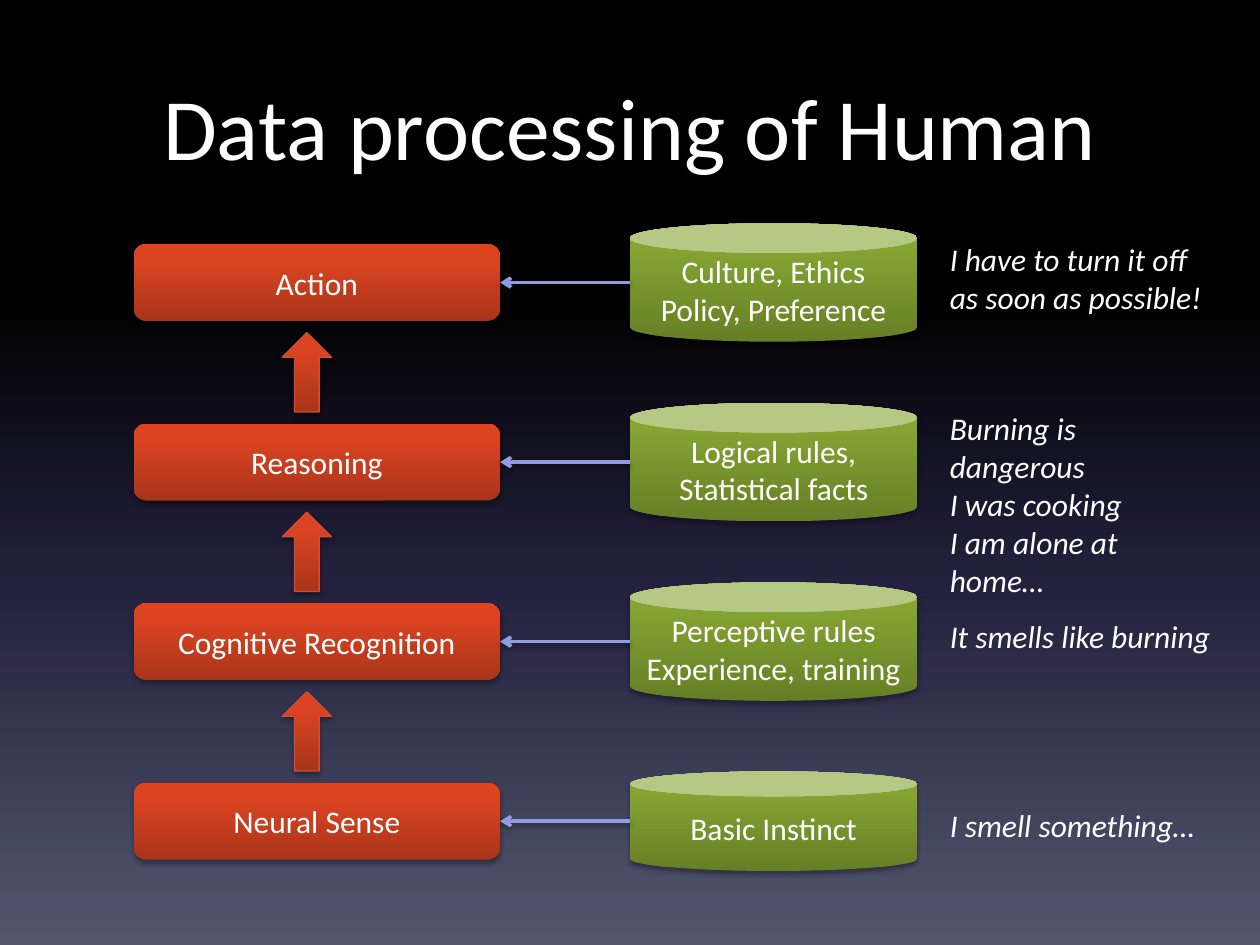
from dataclasses import dataclass

from lxml import etree
from pptx import Presentation
from pptx import util as u
from pptx.dml.color import RGBColor
from pptx.enum import shapes, text
from pptx.oxml.ns import qn

WIDTH, HEIGHT = 10, 7.5
COLORS = {"text": "FFFFFF", "link": "909CE1", "arrow_edge": "CB5034", "shadow": "000000"}
GRADIENTS = {
    "night": [(0, "000000"), (31, "000000"), (62, "24213E"), (100, "51566D")],
    "red": [(0, "A9341A"), (80, "DB4422"), (100, "E0421E")],
    "green": [(0, "667F26"), (80, "85A432"), (100, "87A730")],
}
UP, DOWN = 90, 270

# Stage, knowledge, its height, thought, and the thought's drop below the row's middle
LEVELS = [
    ("Action", ["Culture, Ethics", "Policy, Preference"], 0.94,
     ["I have to turn it off", "as soon as possible!"], -0.03),
    ("Reasoning", ["Logical rules, Statistical facts"], 0.94,
     ["Burning is dangerous", "I was cooking", "I am alone at home…"], 0.04),
    ("Cognitive Recognition", ["Perceptive rules", "Experience, training"], 0.94,
     ["It smells like burning"], -0.04),
    ("Neural Sense", ["Basic Instinct"], 0.79, ["I smell something…"], 0.03),
]


@dataclass
class Box:
    left: float
    top: float
    width: float
    height: float

    def inches(self):
        return [u.Inches(v) for v in (self.left, self.top, self.width, self.height)]

    def centred(self, left, width, height, drop=0):
        """Box at shares of this one's width, centred on its middle plus drop."""
        middle = self.top + self.height / 2 + drop
        return Box(self.left + left * self.width, middle - height / 2,
                   width * self.width, height)


def set_gradient(fill, owner, stops, angle):
    fill.gradient()
    fill.gradient_angle = angle
    stop_list = owner.find(".//" + qn("a:gsLst"))
    for old in list(stop_list):
        stop_list.remove(old)
    for share, color in stops:
        stop = etree.SubElement(stop_list, qn("a:gs"), pos=str(share * 1000))
        etree.SubElement(stop, qn("a:srgbClr"), val=color)


def add_shadow(item, opacity, distance):
    effects = etree.SubElement(item._element.spPr, qn("a:effectLst"))
    shadow = etree.SubElement(effects, qn("a:outerShdw"), blurRad=str(u.Pt(3.1)),
                              dist=str(u.Pt(distance)), dir="5400000", rotWithShape="0")
    color = etree.SubElement(shadow, qn("a:srgbClr"), val=COLORS["shadow"])
    etree.SubElement(color, qn("a:alpha"), val=str(opacity * 1000))


def write(frame, lines, align, anchor, size=18, italic=False):
    frame.vertical_anchor = anchor
    font_values = {"name": "Calibri", "size": u.Pt(size), "italic": italic}
    for number, line in enumerate(lines):
        paragraph = frame.add_paragraph() if number else frame.paragraphs[0]
        paragraph.alignment = align
        run = paragraph.add_run()
        run.text = line
        for name, value in font_values.items():
            setattr(run.font, name, value)
        run.font.color.rgb = RGBColor.from_string(COLORS["text"])


def add_block(slide, kind, box, gradient, lines=(), edge=None):
    block = slide.shapes.add_shape(kind, *box.inches())
    set_gradient(block.fill, block._element, GRADIENTS[gradient], UP)
    if edge:
        block.line.color.rgb = RGBColor.from_string(COLORS[edge])
        block.line.width = u.Pt(0.75)
    else:
        block.line.fill.background()
    add_shadow(block, 35, 1.8)
    block.text_frame.word_wrap = True
    write(block.text_frame, lines, text.PP_ALIGN.CENTER, text.MSO_ANCHOR.MIDDLE)
    return block


def add_link(slide, stage, knowledge):
    """Arrow from the knowledge's left side to the stage's right side."""
    middle = knowledge.top + knowledge.height // 2
    link = slide.shapes.add_connector(shapes.MSO_CONNECTOR.STRAIGHT, knowledge.left, middle,
                                      stage.left + stage.width, middle)
    link.end_connect(stage, 3)
    link.line.color.rgb = RGBColor.from_string(COLORS["link"])
    link.line.width = u.Pt(2)
    outline = link._element.spPr.find(qn("a:ln"))
    etree.SubElement(outline, qn("a:tailEnd"), type="arrow")
    add_shadow(link, 38, 1.6)


def add_thought(slide, box, lines):
    thought = slide.shapes.add_textbox(*box.inches())
    thought.text_frame.word_wrap = False
    write(thought.text_frame, lines, text.PP_ALIGN.LEFT, text.MSO_ANCHOR.TOP, italic=True)


def add_level(slide, row, stage, knowledge, knowledge_height, thought, drop):
    stage_block = add_block(slide, shapes.MSO_SHAPE.ROUNDED_RECTANGLE,
                            row.centred(0.106, 0.291, 0.61), "red", [stage])
    knowledge_block = add_block(slide, shapes.MSO_SHAPE.CAN,
                                row.centred(0.5, 0.228, knowledge_height), "green", knowledge)
    add_link(slide, stage_block, knowledge_block)
    thought_height = 0.1 + 0.305 * len(thought)
    add_thought(slide, row.centred(0.744, 0.23, thought_height, drop), thought)


def add_ladder(slide, box):
    """Stack the levels in equal rows, with an up arrow between neighbours."""
    pitch = box.height / len(LEVELS)
    for number, level in enumerate(LEVELS):
        row = Box(box.left, box.top + number * pitch, box.width, pitch)
        add_level(slide, row, *level)
        if number:
            add_block(slide, shapes.MSO_SHAPE.UP_ARROW,
                      row.centred(0.224, 0.039, 0.63, -pitch / 2), "red", edge="arrow_edge")


def add_title(slide, box, title):
    heading = slide.shapes.add_textbox(*box.inches())
    heading.text_frame.word_wrap = True
    heading.text_frame.margin_top = u.Inches(0.08)
    write(heading.text_frame, [title], text.PP_ALIGN.CENTER, text.MSO_ANCHOR.TOP, size=50)


def main():
    deck = Presentation()
    deck.slide_width, deck.slide_height = u.Inches(WIDTH), u.Inches(HEIGHT)
    slide = deck.slides.add_slide(deck.slide_layouts[6])
    set_gradient(slide.background.fill, slide._element, GRADIENTS["night"], DOWN)
    add_title(slide, Box(0.05 * WIDTH, 0.5, 0.9 * WIDTH, 1.25), "Data processing of Human")
    add_ladder(slide, Box(0, 0.204 * HEIGHT, WIDTH, 0.76 * HEIGHT))
    deck.save("out.pptx")


if __name__ == "__main__":
    main()
